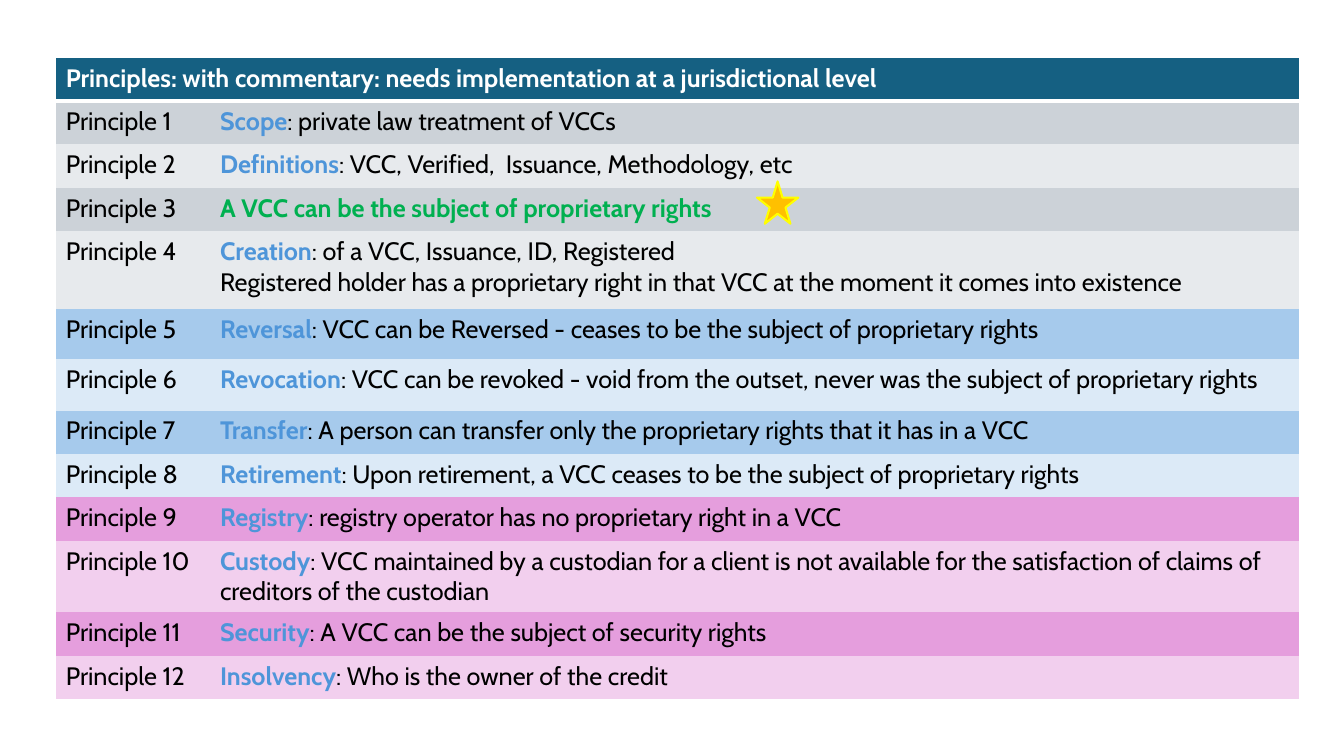
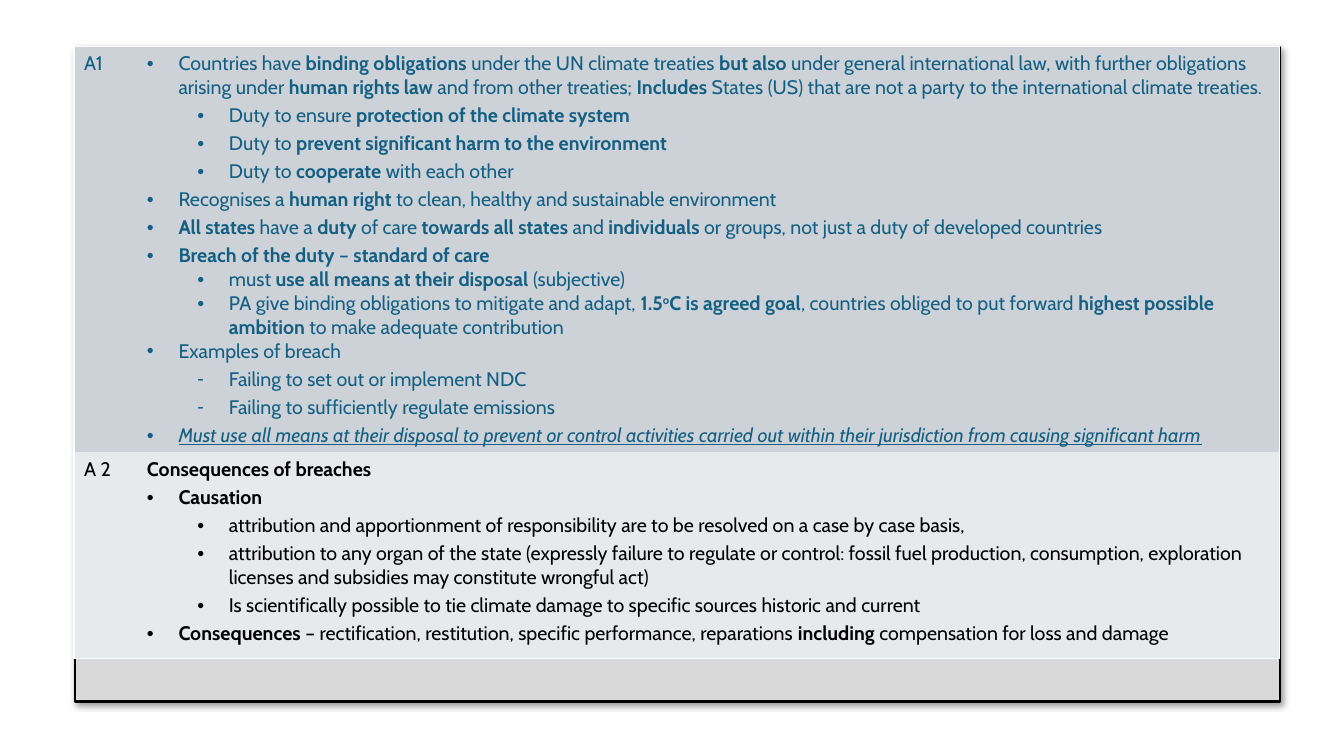
from lxml import etree
from pptx import Presentation
from pptx.dml.color import RGBColor
from pptx.enum.shapes import MSO_SHAPE as Preset
from pptx.oxml import parse_xml
from pptx.oxml.ns import nsdecls, qn
from pptx.util import Pt

FONT = "Cabin"
NO_GRID_STYLE = "{2D5ABB26-0587-4C30-8999-92F81FD0307C}"
WHITE = RGBColor(0xFF, 0xFF, 0xFF)
BLACK = RGBColor(0x00, 0x00, 0x00)
TEAL = RGBColor(0x15, 0x60, 0x82)
TERM_BLUE = RGBColor(0x4E, 0x95, 0xD9)
KEY_GREEN = RGBColor(0x00, 0xB0, 0x50)
GREY, PALE_GREY = RGBColor(0xCC, 0xD2, 0xD8), RGBColor(0xE7, 0xEA, 0xED)
BLUE, PALE_BLUE = RGBColor(0xA6, 0xCA, 0xEC), RGBColor(0xDC, 0xEA, 0xF7)
PINK, PALE_PINK = RGBColor(0xE5, 0x9E, 0xDD), RGBColor(0xF2, 0xCF, 0xEE)
PANEL_GREY = RGBColor(0xD9, 0xD9, 0xD9)
GOLD, YELLOW = RGBColor(0xFF, 0xC0, 0x00), RGBColor(0xFF, 0xFF, 0x00)


def add_plain_table(slide, left, top, widths, heights):
    """Add a table without style or grid, sized by its columns and rows."""
    table = slide.shapes.add_table(
        len(heights), len(widths), Pt(left), Pt(top), Pt(sum(widths)), Pt(sum(heights))
    ).table
    table.first_row = table.horz_banding = False
    table._tbl.tblPr.find(qn("a:tableStyleId")).text = NO_GRID_STYLE
    for column, width in zip(table.columns, widths):
        column.width = Pt(width)
    for row, height in zip(table.rows, heights):
        row.height = Pt(height)
    return table


def fill_cell(cell, lines, size, color, fill, edges, accent=None):
    """Write lines of (level, bullet, space after, text) and style the cell.

    In the text, * switches bold and ^ switches superscript; edges maps
    L, R, T, B to the width of a white border; accent colours bold text.
    """
    for number, (level, bullet, after, text) in enumerate(lines):
        frame = cell.text_frame
        paragraph = frame.add_paragraph() if number else frame.paragraphs[0]
        paragraph.space_after = Pt(after)
        if bullet:
            props = paragraph._p.get_or_add_pPr()
            props.set("marL", str(Pt(22.5 + 36 * level)))
            props.set("indent", str(Pt(-22.5)))
            paragraph.level = level
            etree.SubElement(props, qn("a:buFont")).set("typeface", "Arial")
            etree.SubElement(props, qn("a:buChar")).set("char", bullet)
        paragraph.font.name = FONT
        paragraph.font.size = Pt(size)
        paragraph.font.color.rgb = color
        for i, part in enumerate(text.split("*")):
            for j, piece in enumerate(part.split("^")):
                if not piece:
                    continue
                run = paragraph.add_run()
                run.text = piece
                run.font.bold = i % 2 == 1
                if accent and run.font.bold:
                    run.font.color.rgb = accent
                if j % 2:
                    run.font._element.set("baseline", "30000")
    cell.fill.solid()
    cell.fill.fore_color.rgb = fill
    for place, side in enumerate(side for side in "LRTB" if side in edges):
        cell._tc.tcPr.insert(place, parse_xml(
            f'<a:ln{side} {nsdecls("a")} w="{Pt(edges[side])}"><a:solidFill>'
            f'<a:srgbClr val="{WHITE}"/></a:solidFill></a:ln{side}>'))


deck = Presentation()
deck.slide_width, deck.slide_height = Pt(960), Pt(540)
blank = deck.slide_layouts[6]

# Slide 1: the twelve principles
HEADING = "*Principles: with commentary: needs implementation at a jurisdictional level*"
PRINCIPLES = [
    ["*Scope*: private law treatment of VCCs"],
    ["*Definitions*: VCC, Verified,  Issuance, Methodology, etc"],
    ["*A VCC can be the subject of proprietary rights*"],
    ["*Creation*: of a VCC, Issuance, ID, Registered",
     "Registered holder has a proprietary right in that VCC at the moment it comes into existence"],
    ["*Reversal*: VCC can be Reversed - ceases to be the subject of proprietary rights"],
    ["*Revocation*: VCC can be revoked - void from the outset, never was the subject of proprietary rights"],
    ["*Transfer*: A person can transfer only the proprietary rights that it has in a VCC"],
    ["*Retirement*: Upon retirement, a VCC ceases to be the subject of proprietary rights"],
    ["*Registry*: registry operator has no proprietary right in a VCC"],
    ["*Custody*: VCC maintained by a custodian for a client is not available for the "
     "satisfaction of claims of creditors of the custodian"],
    ["*Security*: A VCC can be the subject of security rights"],
    ["*Insolvency*: Who is the owner of the credit"],
]
GROUP_FILLS = [(GREY, PALE_GREY), (BLUE, PALE_BLUE), (PINK, PALE_PINK)]
KEY_PRINCIPLE = 3
TALL_ROWS = {4: 55.5, 5: 36, 6: 36.7, 10: 51.2}

principles_slide = deck.slides.add_slide(blank)
row_heights = [TALL_ROWS.get(row, 31) for row in range(len(PRINCIPLES) + 1)]
principles = add_plain_table(principles_slide, 39.8, 41.2, [110.2, 778.3], row_heights)
principles.cell(0, 0).merge(principles.cell(0, 1))
fill_cell(principles.cell(0, 0), [(0, None, 0, HEADING)], 18, WHITE, TEAL,
          {"L": 1, "R": 1, "T": 1, "B": 3})
for number, texts in enumerate(PRINCIPLES, start=1):
    fill = GROUP_FILLS[(number - 1) // 4][(number - 1) % 2]
    accent = KEY_GREEN if number == KEY_PRINCIPLE else TERM_BLUE
    bottom = {"B": 1} if number == len(PRINCIPLES) else {}
    fill_cell(principles.cell(number, 0), [(0, None, 0, f"Principle {number}")],
              18, BLACK, fill, {"L": 1, **bottom})
    fill_cell(principles.cell(number, 1), [(0, None, 0, text) for text in texts],
              18, BLACK, fill, {"R": 1, **bottom}, accent)

star = principles_slide.shapes.add_shape(Preset.STAR_5_POINT, Pt(540.7), Pt(129.6), Pt(29.5), Pt(30.2))
star.shadow.inherit = False
star.fill.solid()
star.fill.fore_color.rgb = GOLD
star.line.color.rgb = YELLOW
star.line.width = Pt(1.5)

# Slide 2: answers on obligations and consequences
OBLIGATIONS = [
    (0, "•", 3, "Countries have *binding obligations *under the UN climate treaties *but also *under "
                "general international law, with further obligations arising under *human rights law "
                "*and from other treaties; *Includes* States (US) that are not a party to the "
                "international climate treaties."),
    (1, "•", 3, "Duty to ensure *protection of the climate system*"),
    (1, "•", 3, "Duty to *prevent significant harm to the environment*"),
    (1, "•", 3, "Duty to *cooperate* with each other"),
    (0, "•", 3, "Recognises a *human right *to clean, healthy and sustainable environment"),
    (0, "•", 3, "*All states *have a *duty* of care *towards all states *and *individuals* or groups, "
                "not just a duty of developed countries"),
    (0, "•", 0, "*Breach of the duty *– *standard of care*"),
    (1, "•", 0, "must *use all means at their disposal *(subjective)"),
    (1, "•", 0, "PA give binding obligations to mitigate and adapt, *1.5^o^C is agreed goal*, countries "
                "obliged to put forward *highest possible ambition *to make adequate contribution"),
    (0, "•", 3, "Examples of breach"),
    (1, "-", 3, "Failing to set out or implement NDC"),
    (1, "-", 3, "Failing to sufficiently regulate emissions"),
    (0, "•", 3, "Must use all means at their disposal to prevent or control activities carried out "
                "within their jurisdiction from causing significant harm"),
]
CONSEQUENCES = [
    (0, None, 3, "*Consequences of breaches*"),
    (0, "•", 3, "*Causation*"),
    (1, "•", 3, "attribution and apportionment of responsibility are to be resolved on a case by case basis,"),
    (1, "•", 3, "attribution to any organ of the state (expressly failure to regulate or control: fossil "
                "fuel production, consumption, exploration licenses and subsidies may constitute wrongful act)"),
    (1, "•", 3, "Is scientifically possible to tie climate damage to specific sources historic and current"),
    (0, "•", 3, "*Consequences *– rectification, restitution, specific performance, reparations "
                "*including* compensation for loss and damage"),
]
ANSWERS = [
    ("A1", OBLIGATIONS, TEAL, GREY, {"T": 1}),
    ("A 2", CONSEQUENCES, BLACK, PALE_GREY, {"B": 1}),
]

answers_slide = deck.slides.add_slide(blank)
panel = answers_slide.shapes.add_shape(Preset.RECTANGLE, Pt(53.3), Pt(33.8), Pt(861), Pt(467.3))
panel.fill.solid()
panel.fill.fore_color.rgb = PANEL_GREY
panel.line.color.rgb = BLACK
panel.line.width = Pt(1.5)
panel.shadow.inherit = False
panel._element.spPr.find(qn("a:effectLst")).append(parse_xml(
    f'<a:outerShdw {nsdecls("a")} blurRad="{Pt(4)}" dist="{Pt(3)}" dir="2700000" algn="tl" '
    f'rotWithShape="0"><a:srgbClr val="{BLACK}"><a:alpha val="40000"/></a:srgbClr></a:outerShdw>'))

answers = add_plain_table(answers_slide, 52.8, 33.2, [45, 816], [281, 147.6])
for row, (label, lines, color, fill, edge) in enumerate(ANSWERS):
    fill_cell(answers.cell(row, 0), [(0, None, 3, label)], 14, color, fill, {"L": 1, **edge})
    fill_cell(answers.cell(row, 1), lines, 14, color, fill, {"R": 1, **edge})
closing_duty = answers.cell(0, 1).text_frame.paragraphs[-1]
closing_duty.font.italic = closing_duty.font.underline = True

deck.save("out.pptx")
